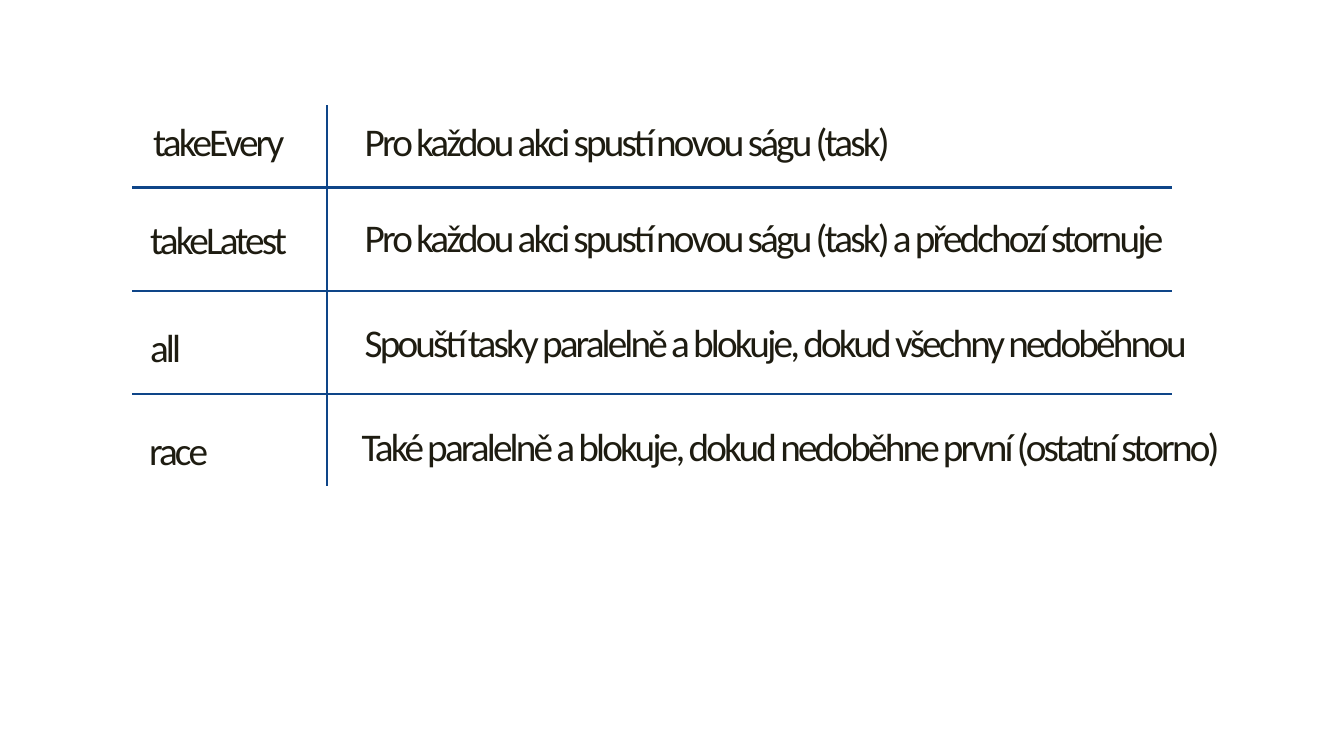
from lxml import etree
from pptx import Presentation
from pptx.dml.color import RGBColor
from pptx.enum import shapes, text
from pptx.oxml import ns
from pptx.util import Pt

# Each row: effect name, its left and top, description, its left, top and width
EFFECTS = [
    ("takeEvery", 102.24, 79.92,
     "Pro každou akci spustí novou ságu (task)", 253.44, 79.92, 507.6),
    ("takeLatest", 100.08, 150.48,
     "Pro každou akci spustí novou ságu (task) a předchozí stornuje", 253.44, 149.04, 595.44),
    ("all", 100.08, 227.52,
     "Spouští tasky paralelně a blokuje, dokud všechny nedoběhnou", 253.44, 223.92, 614.88),
    ("race", 99.36, 300.96,
     "Také paralelně a blokuje, dokud nedoběhne první (ostatní storno)", 251.28, 298.08, 639.36),
]
NAME_WIDTH = 129
RULE_LEFT, RULE_RIGHT = 94.32, 837.36
RULE_TOPS = [133.92, 208.08, 281.52]
DIVIDER_X, DIVIDER_TOP, DIVIDER_BOTTOM = 233.28, 74.88, 347.04


def color(hex_value):
    return RGBColor.from_string(hex_value)


class SlideBuilder:
    font_name = "Calibri"
    font_size = 28
    letter_spacing = -2
    text_color = "1E1C11"
    line_color = "0E4588"
    line_width = 1.5

    def __init__(self, slide):
        self.slide = slide

    def label(self, words, left, top, width, height=42):
        shape = self.slide.shapes.add_textbox(Pt(left), Pt(top), Pt(width), Pt(height))
        frame = shape.text_frame
        frame.word_wrap = True
        frame.vertical_anchor = text.MSO_ANCHOR.TOP
        run = frame.paragraphs[0].add_run()
        run.text = words
        run.font.name = self.font_name
        run.font.size = Pt(self.font_size)
        run.font.color.rgb = color(self.text_color)
        run.font._element.set("spc", str(self.letter_spacing * 100))

    def line(self, x1, y1, x2, y2):
        connector = self.slide.shapes.add_connector(
            shapes.MSO_CONNECTOR.STRAIGHT, Pt(x1), Pt(y1), Pt(x2), Pt(y2))
        connector.line.color.rgb = color(self.line_color)
        connector.line.width = Pt(self.line_width)
        etree.SubElement(connector._element.spPr, ns.qn("a:effectLst"))


def main():
    presentation = Presentation()
    presentation.slide_width, presentation.slide_height = Pt(960), Pt(540)
    builder = SlideBuilder(presentation.slides.add_slide(presentation.slide_layouts[6]))

    for top in RULE_TOPS:
        builder.line(RULE_LEFT, top, RULE_RIGHT, top)
    builder.line(DIVIDER_X, DIVIDER_BOTTOM, DIVIDER_X, DIVIDER_TOP)

    for name, name_left, name_top, description, left, top, width in EFFECTS:
        builder.label(name, name_left, name_top, NAME_WIDTH)
        builder.label(description, left, top, width)

    presentation.save("out.pptx")


if __name__ == "__main__":
    main()
